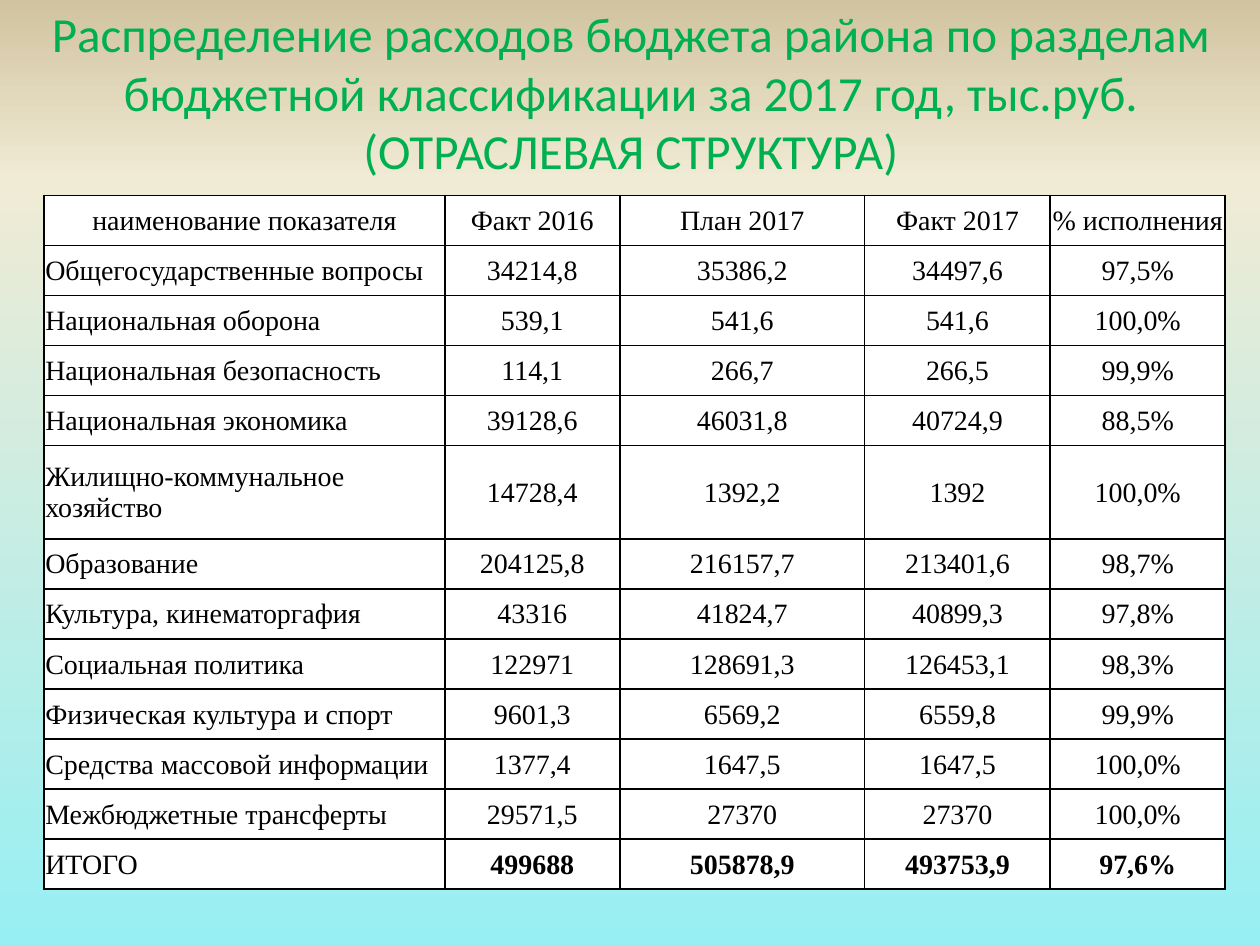
import copy
import pptx
import pptx.dml.color
import pptx.enum.text
import pptx.oxml
import pptx.oxml.ns
import pptx.util

Pt = pptx.util.Pt
PP_ALIGN = pptx.enum.text.PP_ALIGN
ANCHOR = pptx.enum.text.MSO_ANCHOR

TITLE = ("Распределение расходов бюджета района по разделам "
         "бюджетной классификации за 2017 год, тыс.руб.\v(ОТРАСЛЕВАЯ СТРУКТУРА)")
BUDGET = [
    ("наименование показателя", "Факт 2016", "План 2017", "Факт 2017", "% исполнения"),
    ("Общегосударственные вопросы", "34214,8", "35386,2", "34497,6", "97,5%"),
    ("Национальная оборона", "539,1", "541,6", "541,6", "100,0%"),
    ("Национальная безопасность", "114,1", "266,7", "266,5", "99,9%"),
    ("Национальная экономика", "39128,6", "46031,8", "40724,9", "88,5%"),
    ("Жилищно-коммунальное хозяйство", "14728,4", "1392,2", "1392", "100,0%"),
    ("Образование", "204125,8", "216157,7", "213401,6", "98,7%"),
    ("Культура, кинематоргафия", "43316", "41824,7", "40899,3", "97,8%"),
    ("Социальная политика", "122971", "128691,3", "126453,1", "98,3%"),
    ("Физическая культура и спорт", "9601,3", "6569,2", "6559,8", "99,9%"),
    ("Средства массовой информации", "1377,4", "1647,5", "1647,5", "100,0%"),
    ("Межбюджетные трансферты", "29571,5", "27370", "27370", "100,0%"),
    ("ИТОГО", "499688", "505878,9", "493753,9", "97,6%"),
]
BACKGROUND = [(0, "97EFF3"), (0.81, "F0EBD5"), (1, "D1C39F")]
COLUMN_WIDTHS = [229, 100, 140, 106, 100]
ROW_HEIGHT, TALL_ROW_HEIGHT, TALL_ROW = 28.6, 53.5, 5
TOTAL_ROW = len(BUDGET) - 1


def color(value):
    return pptx.dml.color.RGBColor.from_string(value)


def format_font(font, name, size, value):
    font.name, font.size, font.color.rgb = name, Pt(size), color(value)


def paint_background(slide):
    fill = slide.background.fill
    fill.gradient()
    fill.gradient_angle = 90
    first_stop = slide.element.xpath(".//p:bg//a:gs")[0]
    first_stop.addnext(copy.deepcopy(first_stop))
    for stop, (position, value) in zip(fill.gradient_stops, BACKGROUND):
        stop.position, stop.color.rgb = position, color(value)


def add_borders(cell):
    properties = cell._tc.get_or_add_tcPr()
    for index, side in enumerate(("lnL", "lnR", "lnT", "lnB")):
        properties.insert(index, pptx.oxml.parse_xml(
            f'<a:{side} {pptx.oxml.ns.nsdecls("a")} w="12700"><a:solidFill>'
            f'<a:srgbClr val="000000"/></a:solidFill></a:{side}>'))


def add_title(slide):
    title = slide.shapes.title
    title.left, title.top, title.width, title.height = Pt(14.4), Pt(21), Pt(692), Pt(62.6)
    frame = title.text_frame
    frame.auto_size = pptx.enum.text.MSO_AUTO_SIZE.NONE
    frame.vertical_anchor = ANCHOR.MIDDLE
    heading = frame.paragraphs[0]
    heading.text = TITLE
    heading.alignment = PP_ALIGN.CENTER
    format_font(heading.font, "Calibri", 28, "00B050")


def add_budget_table(slide):
    heights = [TALL_ROW_HEIGHT if r == TALL_ROW else ROW_HEIGHT for r in range(len(BUDGET))]
    budget = slide.shapes.add_table(
        len(BUDGET), len(COLUMN_WIDTHS), Pt(25.2), Pt(111.6),
        Pt(sum(COLUMN_WIDTHS)), Pt(sum(heights))).table
    for column, width in zip(budget.columns, COLUMN_WIDTHS):
        column.width = Pt(width)
    for r, (entries, height) in enumerate(zip(BUDGET, heights)):
        budget.rows[r].height = Pt(height)
        for c, entry in enumerate(entries):
            cell = budget.cell(r, c)
            cell.margin_left = cell.margin_right = cell.margin_top = Pt(0.7)
            cell.margin_bottom = 0
            cell.vertical_anchor = ANCHOR.MIDDLE
            cell.fill.solid()
            cell.fill.fore_color.rgb = color("FFFFFF")
            add_borders(cell)
            line = cell.text_frame.paragraphs[0]
            line.text = entry
            line.alignment = PP_ALIGN.LEFT if c == 0 and r > 0 else PP_ALIGN.CENTER
            format_font(line.font, "Times New Roman", 16, "000000")
            line.font.bold = r == TOTAL_ROW and c > 0


def main():
    deck = pptx.Presentation()
    deck.slide_width, deck.slide_height = Pt(720), Pt(540)
    slide = deck.slides.add_slide(deck.slide_layouts[5])
    paint_background(slide)
    add_title(slide)
    add_budget_table(slide)
    deck.save("out.pptx")


if __name__ == "__main__":
    main()
